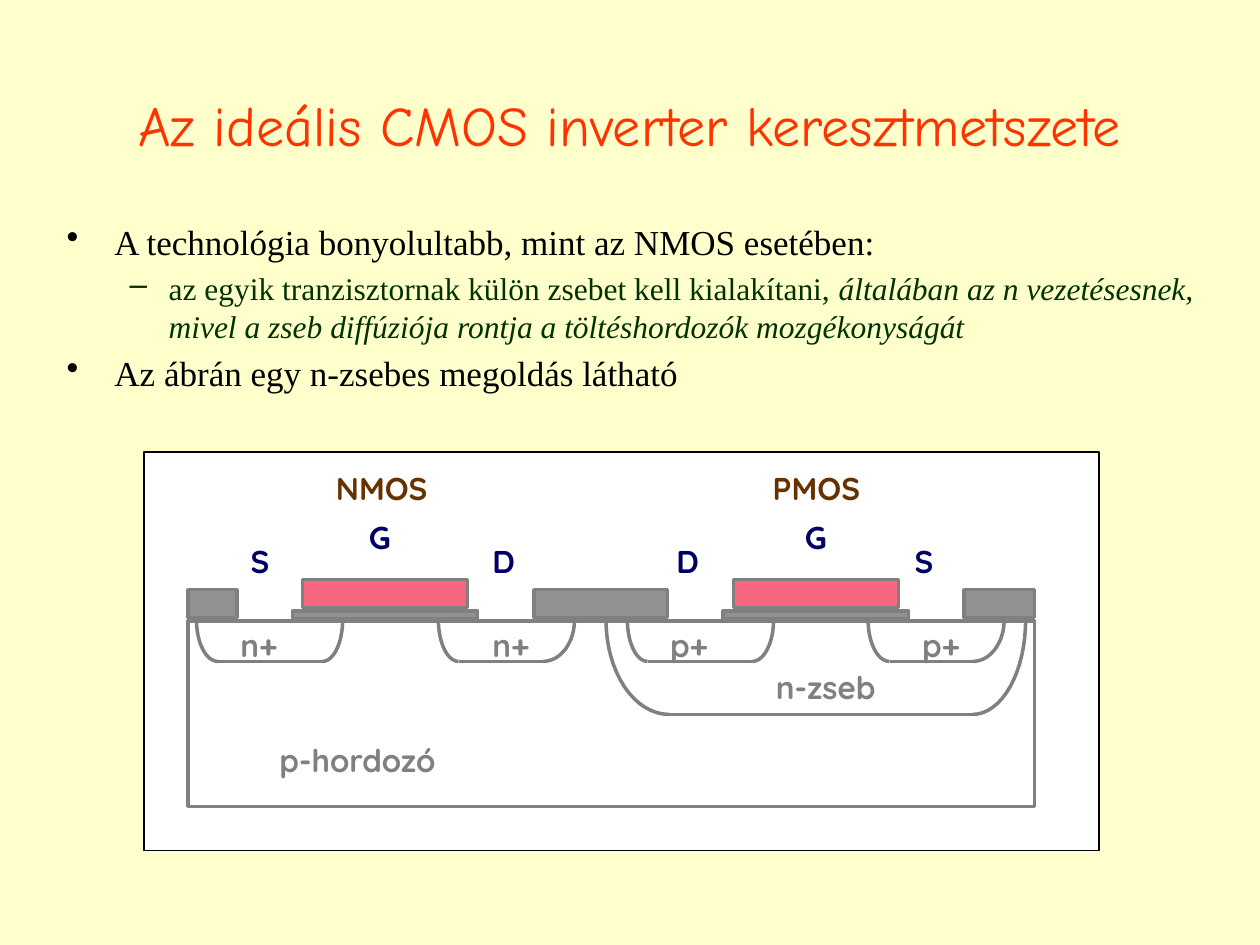
"""Build a slide with the cross-section of an ideal CMOS inverter."""
import math
from lxml import etree
from pptx import Presentation
from pptx.dml.color import RGBColor
from pptx.enum import shapes, text
from pptx.oxml.ns import qn
from pptx.util import Inches, Pt

GRAY, NAVY, BROWN = "808080", "000066", "663300"


def paint(fmt, hue):
    fmt.solid()
    fmt.fore_color.rgb = RGBColor.from_string(hue)


def style(run, face, size, hue, bold=False, slant=False):
    font = run.font
    font.name, font.size = face, Pt(size)
    font.bold, font.italic = bold, slant
    paint(font.fill, hue)


deck = Presentation()
deck.slide_width, deck.slide_height = Inches(10), Inches(7.5)
slide = deck.slides.add_slide(deck.slide_layouts[6])
paint(slide.background.fill, "FFFFCC")
items = slide.shapes

box = items.add_textbox(Inches(0.75), Inches(0.36), Inches(8.5), Inches(1.25))
frame = box.text_frame
frame.word_wrap = True
frame.vertical_anchor = text.MSO_ANCHOR.MIDDLE
frame.text = "Az ideális CMOS inverter keresztmetszete"
para = frame.paragraphs[0]
para.alignment = text.PP_ALIGN.CENTER
style(para.runs[0], "Comic Neue", 32, "FF3300")

box = items.add_textbox(Inches(0.43), Inches(1.7), Inches(9.21), Inches(1.65))
frame = box.text_frame
frame.word_wrap = True
points = [
    (0, ["A technológia bonyolultabb, mint az NMOS esetében:"]),
    (1, ["az egyik tranzisztornak külön zsebet kell kialakítani, ",
         "általában az n vezetésesnek, mivel a zseb diffúziója rontja "
         "a töltéshordozók mozgékonyságát"]),
    (0, ["Az ábrán egy n-zsebes megoldás látható"]),
]
looks = [(0.38, 0.38, "•", 20, "000000"), (0.81, 0.31, "–", 18, "003300")]
for i, (level, parts) in enumerate(points):
    left, hang, mark, size, hue = looks[level]
    para = frame.add_paragraph() if i else frame.paragraphs[0]
    para.level = level
    para.space_before = Pt(size * 0.2)
    for j, part in enumerate(parts):
        run = para.add_run()
        run.text = part
        style(run, "Times New Roman", size, hue, slant=j > 0)
    props = para._p.get_or_add_pPr()
    props.set("marL", str(Inches(left)))
    props.set("indent", str(-Inches(hang)))
    etree.SubElement(props, qn("a:buChar")).set("char", mark)

rects = [
    (1.14, 3.59, 7.58, 3.16, "FFFFFF", "000000", 1),
    (1.49, 4.93, 6.72, 1.47, "FFFFFF", GRAY, 2),
]
for x, wide in [(1.49, 0.39), (4.24, 1.06), (7.65, 0.56)]:
    rects.append((x, 4.68, wide, 0.22, "919191", GRAY, 2))
for x in (2.32, 5.74):
    rects.append((x, 4.85, 1.47, 0.06, "919191", GRAY, 2))
    rects.append((x + 0.08, 4.6, 1.31, 0.22, "F76681", GRAY, 2))
for x, y, wide, high, hue, edge, weight in rects:
    rect = items.add_shape(shapes.MSO_SHAPE.RECTANGLE, Inches(x), Inches(y),
                           Inches(wide), Inches(high))
    rect.shadow.inherit = False
    paint(rect.fill, hue)
    paint(rect.line.fill, edge)
    rect.line.width = Pt(weight)

top, steps = 4.92, 16
wells = [
    (1.56, 1.73, 2.56, 2.72, 5.25),
    (3.48, 3.64, 4.31, 4.56, 5.25),
    (4.98, 5.14, 5.97, 6.14, 5.25),
    (6.89, 7.06, 7.72, 7.97, 5.25),
    (4.81, 5.31, 7.72, 8.14, 5.67),
]
for left, start, end, right, base in wells:
    floor = items.add_connector(shapes.MSO_CONNECTOR.STRAIGHT, Inches(start),
                                Inches(base), Inches(end), Inches(base))
    etree.SubElement(floor._element.spPr, qn("a:effectLst"))
    paint(floor.line.fill, GRAY)
    floor.line.width = Pt(2)
    for rim, foot in [(left, start), (right, end)]:
        turns = [math.pi / 2 * n / steps for n in range(steps + 1)]
        curve = [(Inches(foot + (rim - foot) * math.cos(t)),
                  Inches(top + (base - top) * math.sin(t))) for t in turns]
        pen = items.build_freeform(*curve[0])
        pen.add_line_segments(curve[1:], close=False)
        wall = pen.convert_to_shape()
        wall.shadow.inherit = False
        wall.fill.background()
        paint(wall.line.fill, GRAY)
        wall.line.width = Pt(2)

labels = [
    ("p-hordozó", 2.12, 5.83, 1.57, GRAY),
    ("n-zseb", 6.06, 5.25, 1.1, GRAY),
    ("n+", 1.81, 4.92, 0.67, GRAY),
    ("n+", 3.81, 4.92, 0.67, GRAY),
    ("p+", 5.22, 4.92, 0.67, GRAY),
    ("p+", 7.22, 4.92, 0.67, GRAY),
    ("S", 1.89, 4.25, 0.42, NAVY),
    ("D", 3.81, 4.25, 0.5, NAVY),
    ("D", 5.27, 4.25, 0.5, NAVY),
    ("S", 7.16, 4.25, 0.42, NAVY),
    ("G", 2.83, 4.06, 0.42, NAVY),
    ("G", 6.29, 4.06, 0.42, NAVY),
    ("NMOS", 2.45, 3.67, 1.16, BROWN),
    ("PMOS", 5.9, 3.67, 1.16, BROWN),
]
for name, x, y, wide, hue in labels:
    box = items.add_textbox(Inches(x), Inches(y), Inches(wide), Inches(0.4))
    frame = box.text_frame
    frame.word_wrap = True
    frame.text = name
    para = frame.paragraphs[0]
    if hue == BROWN:
        para.alignment = text.PP_ALIGN.CENTER
    style(para.runs[0], "Quicksand", 18, hue, bold=True)

deck.save("out.pptx")
